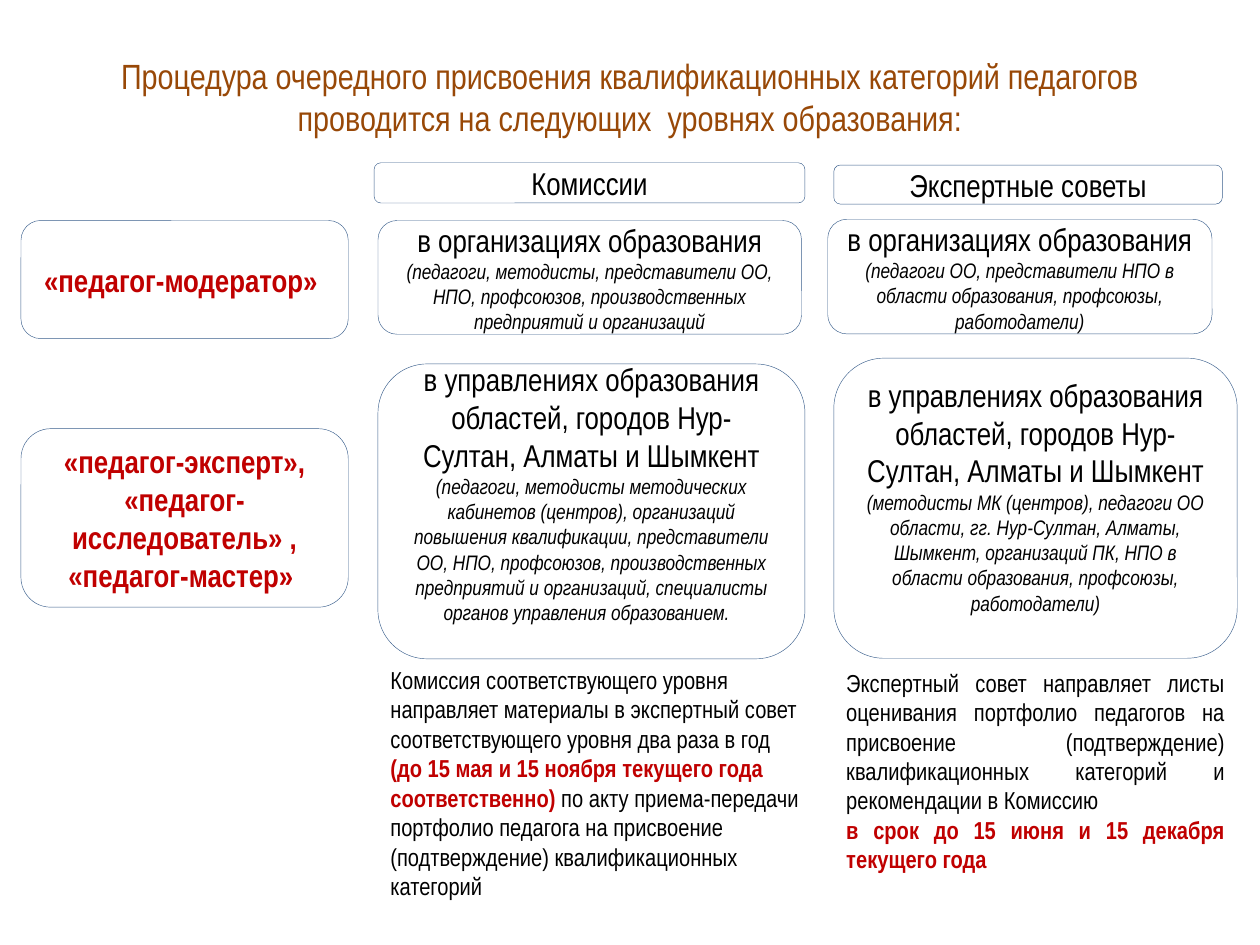
from pptx import Presentation
from pptx.dml.color import RGBColor
from pptx.enum.shapes import MSO_SHAPE
from pptx.enum.text import MSO_ANCHOR, PP_ALIGN
from pptx.util import Pt

ROUND_RECT = MSO_SHAPE.ROUNDED_RECTANGLE
MIDDLE = MSO_ANCHOR.MIDDLE
LEFT, CENTER, JUSTIFY = PP_ALIGN.LEFT, PP_ALIGN.CENTER, PP_ALIGN.JUSTIFY

FONT = "Arial Narrow"
BLACK = RGBColor(0x00, 0x00, 0x00)
WHITE = RGBColor(0xFF, 0xFF, 0xFF)
RED = RGBColor(0xC0, 0x00, 0x00)
BROWN = RGBColor(0x98, 0x48, 0x07)
OUTLINE = RGBColor(0x3A, 0x5F, 0x8C)

IN_SCHOOLS = "в организациях образования"
IN_DEPARTMENTS = "в управлениях образования областей, городов Нур-Султан, Алматы и Шымкент"


def add_run(p, text, size, color=BLACK, bold=False, italic=False):
    r = p.add_run()
    r.text = text
    r.font.name = FONT
    r.font.size = Pt(size)
    r.font.bold = bold
    r.font.italic = italic
    r.font.color.rgb = color


def add_paragraphs(tf, paragraphs, align):
    """Each paragraph is a list of argument tuples for add_run."""
    tf.word_wrap = True
    for i, runs in enumerate(paragraphs):
        p = tf.paragraphs[0] if i == 0 else tf.add_paragraph()
        p.alignment = align
        for run in runs:
            add_run(p, *run)


def add_text(s, box, paragraphs, align):
    tf = s.shapes.add_textbox(*map(Pt, box)).text_frame
    add_paragraphs(tf, paragraphs, align)
    return tf


def add_card(s, box, paragraphs, lift=0):
    """Rounded card; lift is extra room below the centred text."""
    sp = s.shapes.add_shape(ROUND_RECT, *map(Pt, box))
    sp.shadow.inherit = False
    sp.fill.solid()
    sp.fill.fore_color.rgb = WHITE
    sp.line.color.rgb = OUTLINE
    sp.line.width = Pt(0.25)
    tf = sp.text_frame
    tf.vertical_anchor = MIDDLE
    tf.margin_bottom = Pt(3.6 + lift)
    add_paragraphs(tf, paragraphs, CENTER)


def add_title(s, box):
    text = ("Процедура очередного присвоения квалификационных категорий "
            "педагогов проводится на следующих  уровнях образования:")
    tf = add_text(s, box, [[(text, 20, BROWN)]], CENTER)
    tf.vertical_anchor = MIDDLE
    tf.margin_bottom = Pt(27)


def add_categories(s, left, width):
    cards = [
        (126, 67.5, "«педагог-модератор» "),
        (245, 102, "«педагог-эксперт», «педагог-исследователь» , «педагог-мастер» "),
    ]
    for top, height, text in cards:
        add_card(s, (left, top, width, height), [[(text, 18, RED, True)]])


def add_body(s, header_box, header, cards):
    """Column of one body: its header and a card for each level."""
    for box, level, members, lift in cards:
        add_card(s, box, [[(level, 18)], [(members, 12, BLACK, False, True)]], lift)
    add_card(s, header_box, [[(header, 18)]])


def main():
    prs = Presentation()
    prs.slide_width, prs.slide_height = Pt(720), Pt(540)
    s = prs.slides.add_slide(prs.slide_layouts[6])

    add_title(s, (36, 21.6, 648, 90))
    add_categories(s, 12, 187)

    # Commissions
    add_body(s, (213.8, 93, 246.2, 23), "Комиссии", [
        ((216, 126, 242, 65), IN_SCHOOLS,
         "(педагоги, методисты, представители ОО, НПО, профсоюзов, "
         "производственных предприятий и организаций", 0),
        ((216, 208, 244, 168.5), IN_DEPARTMENTS,
         "(педагоги, методисты методических кабинетов (центров), организаций "
         "повышения квалификации, представители ОО, НПО, профсоюзов, "
         "производственных предприятий и организаций, специалисты органов "
         "управления образованием.  ", 21.6),
    ])
    add_text(s, (216, 376.5, 248.4, 143), [[
        ("Комиссия соответствующего уровня направляет материалы в экспертный "
         "совет соответствующего уровня два раза в год ", 14),
        ("(до 15 мая и 15 ноября текущего года соответственно) ", 14, RED, True),
        ("по акту приема-передачи портфолио педагога на присвоение "
         "(подтверждение) квалификационных категорий", 14),
    ]], LEFT)

    # Expert councils
    add_body(s, (476.5, 94.3, 222, 22.3), "Экспертные советы", [
        ((473, 125.3, 219.6, 65.5), IN_SCHOOLS,
         "(педагоги ОО, представители НПО в области образования, профсоюзы, "
         "работодатели)", 0),
        ((476.5, 204.7, 230.5, 171.5), IN_DEPARTMENTS,
         "(методисты МК (центров), педагоги ОО области, гг. Нур-Султан, Алматы, "
         "Шымкент, организаций ПК, НПО в области образования, профсоюзы, "
         "работодатели)", 14.4),
    ])
    add_text(s, (476.5, 378, 230.5, 126), [
        [("Экспертный совет направляет листы оценивания портфолио педагогов на "
          "присвоение (подтверждение) квалификационных категорий и рекомендации "
          "в Комиссию ", 14)],
        [("в срок до 15 июня и 15 декабря текущего года ", 14, RED, True)],
    ], JUSTIFY)

    prs.save("out.pptx")


if __name__ == "__main__":
    main()
